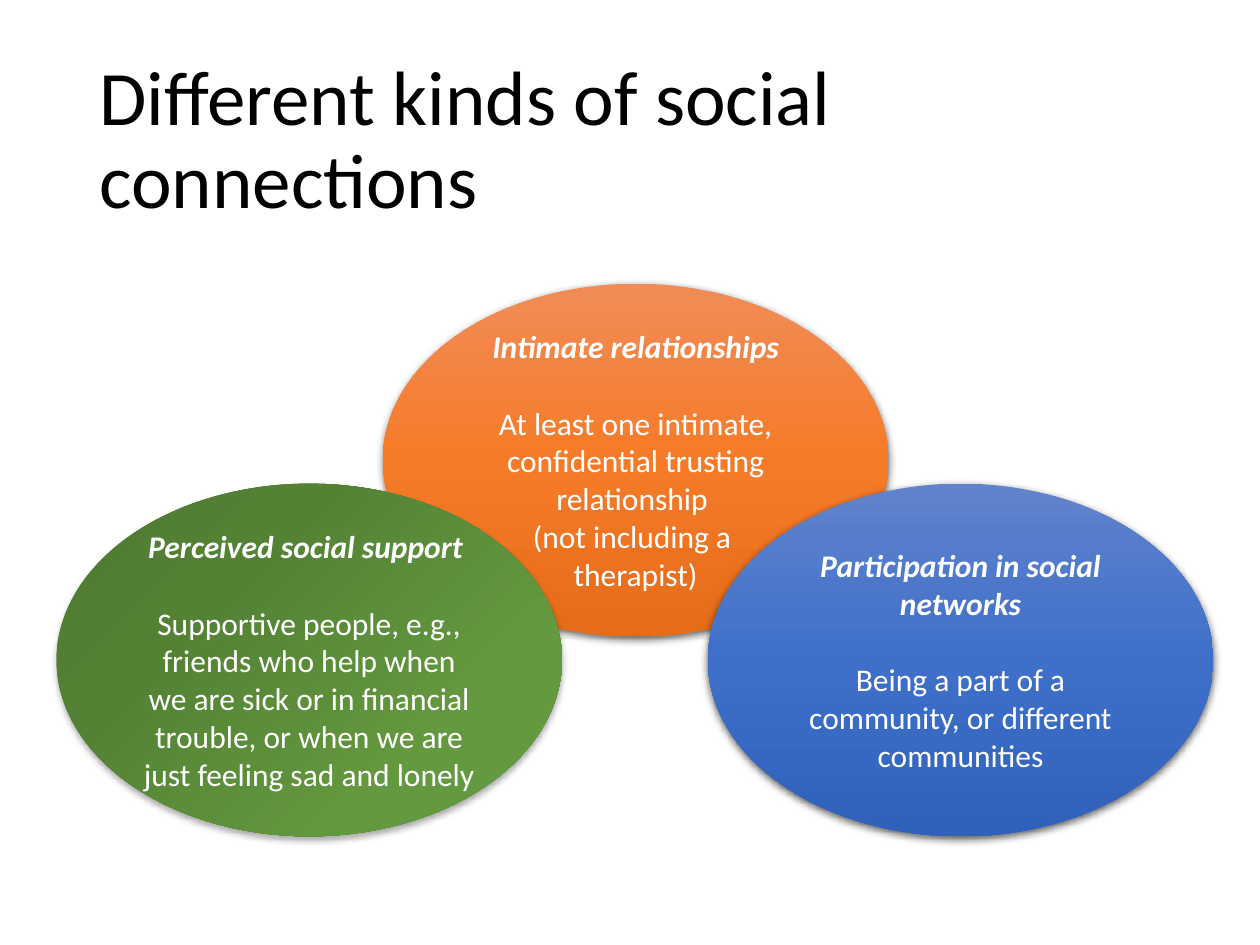
from lxml.etree import SubElement
from pptx import Presentation
from pptx.dml.color import RGBColor
from pptx.enum.shapes import MSO_SHAPE
from pptx.enum.text import MSO_ANCHOR, PP_ALIGN
from pptx.oxml import parse_xml
from pptx.oxml.ns import nsdecls, qn
from pptx.util import Cm, Pt

FONT = "Calibri"
LINEAR = '<a:lin ang="5400000" scaled="0"/>'
RADIAL = '<a:path path="circle"><a:fillToRect l="100000" t="100000"/></a:path>'
SOFT_SHADOW = (63, 4.5, 1.5)
LIGHT_SHADOW = (32, 3.5, 2.2)


def rgb(value):
    return RGBColor.from_string(value)


def add_run(p, text, size, color, bold=False, italic=False):
    r = p.add_run()
    r.text = text
    r.font.name = FONT
    r.font.size = Pt(size)
    r.font.bold = bold
    r.font.italic = italic
    r.font.color.rgb = rgb(color)


def set_title(s, text):
    title = s.shapes.title
    title.left, title.top = Cm(1.75), Cm(1.02)
    title.width, title.height = Cm(21.9), Cm(3.68)
    tf = title.text_frame
    tf.vertical_anchor = MSO_ANCHOR.MIDDLE
    p = tf.paragraphs[0]
    p.alignment = PP_ALIGN.LEFT
    p.line_spacing = 0.9
    add_run(p, text, 44, "000000")


def set_gradient(sp, stops, direction):
    marks = "".join(
        f'<a:gs pos="{pos * 1000}"><a:srgbClr val="{color}"/></a:gs>'
        for pos, color in stops
    )
    fill = parse_xml(
        f'<a:gradFill {nsdecls("a")} rotWithShape="1">'
        f"<a:gsLst>{marks}</a:gsLst>{direction}</a:gradFill>"
    )
    sp.element.spPr.find(qn("a:prstGeom")).addnext(fill)


def set_shadow(sp, alpha, blur, distance):
    sp.shadow.inherit = False
    effects = sp.element.spPr.find(qn("a:effectLst"))
    shadow = SubElement(
        effects, qn("a:outerShdw"), blurRad=str(Pt(blur)),
        dist=str(Pt(distance)), dir="5400000", algn="ctr", rotWithShape="0",
    )
    color = SubElement(shadow, qn("a:srgbClr"), val="000000")
    SubElement(color, qn("a:alpha"), val=str(alpha * 1000))


def add_bubble(s, left, top, heading, lines, stops, direction, shadow):
    sp = s.shapes.add_shape(
        MSO_SHAPE.OVAL, Cm(left), Cm(top), Cm(10.19), Cm(7.11)
    )
    sp.line.fill.background()
    set_gradient(sp, stops, direction)
    set_shadow(sp, *shadow)
    tf = sp.text_frame
    tf.word_wrap = True
    tf.vertical_anchor = MSO_ANCHOR.MIDDLE
    p = tf.paragraphs[0]
    p.alignment = PP_ALIGN.CENTER
    add_run(p, heading, 18, "FFFFFF", bold=True, italic=True)
    for i, line in enumerate(lines):
        p = tf.add_paragraph()
        p.alignment = PP_ALIGN.CENTER
        p.space_before = Pt(0 if i else 22)
        add_run(p, line, 18, "FFFFFF")


def main():
    prs = Presentation()
    prs.slide_width, prs.slide_height = Cm(25.4), Cm(19.05)
    s = prs.slides.add_slide(prs.slide_layouts[5])
    set_title(s, "Different kinds of social connections")
    add_bubble(
        s, 7.72, 5.72, "Intimate relationships",
        ["At least one intimate, confidential trusting relationship ",
         "(not including a ", "therapist)"],
        [(0, "F18C57"), (50, "F67B28"), (100, "E56C19")], LINEAR, SOFT_SHADOW,
    )
    add_bubble(
        s, 14.27, 9.75, "Participation in social networks",
        ["Being a part of a community, or different communities"],
        [(0, "6183CB"), (50, "3E70CA"), (100, "3062BB")], LINEAR, SOFT_SHADOW,
    )
    add_bubble(
        s, 1.14, 9.75, "Perceived social support ",
        ["Supportive people, e.g., friends who help when we are sick or in "
         "financial trouble, or when we are just feeling sad and lonely"],
        [(0, "649A3F"), (23, "649A3F"), (69, "548235"), (97, "4E7932")],
        RADIAL, LIGHT_SHADOW,
    )
    prs.save("out.pptx")


if __name__ == "__main__":
    main()
